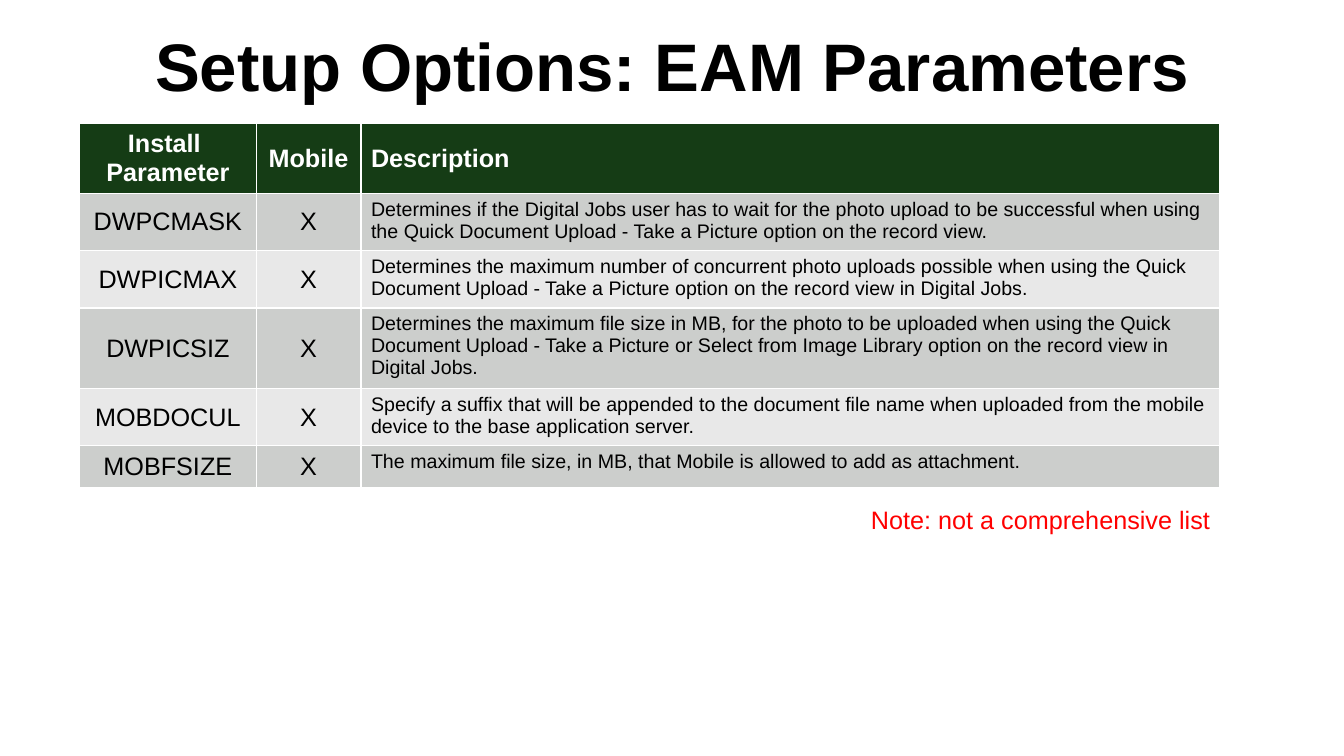
from pptx import Presentation
from pptx.dml.color import RGBColor
from pptx.enum.text import MSO_ANCHOR, PP_ALIGN
from pptx.util import Inches, Pt

LEFT, CENTER = PP_ALIGN.LEFT, PP_ALIGN.CENTER
TOP, MIDDLE, BOTTOM = MSO_ANCHOR.TOP, MSO_ANCHOR.MIDDLE, MSO_ANCHOR.BOTTOM

# Content
TITLE = "Setup Options: EAM Parameters"
NOTE = "Note: not a comprehensive list"
HEADINGS = ("Install \nParameter", "Mobile", "Description")
PARAMETERS = [
    ("DWPCMASK", "X",
     "Determines if the Digital Jobs user has to wait for the photo upload to be "
     "successful when using the Quick Document Upload - Take a Picture option on "
     "the record view."),
    ("DWPICMAX", "X",
     "Determines the maximum number of concurrent photo uploads possible when using "
     "the Quick Document Upload - Take a Picture option on the record view in "
     "Digital Jobs."),
    ("DWPICSIZ", "X",
     "Determines the maximum file size in MB, for the photo to be uploaded when using "
     "the Quick Document Upload - Take a Picture or Select from Image Library option "
     "on the record view in Digital Jobs."),
    ("MOBDOCUL", "X",
     "Specify a suffix that will be appended to the document file name when uploaded "
     "from the mobile device to the base application server."),
    ("MOBFSIZE", "X",
     "The maximum file size, in MB, that Mobile is allowed to add as attachment."),
]

# Formats
COLUMN_WIDTHS = (1.75, 1.04, 8.52)
ROW_HEIGHT = 0.41
ALIGNMENTS = (CENTER, CENTER, LEFT)
BODY_SIZES = (18, 18, 14)
BODY_ANCHORS = (MIDDLE, MIDDLE, TOP)
HEADER_FILL, BAND_FILLS = "153C15", ("CCCECC", "E8E8E8")


def color(hex_value):
    return RGBColor.from_string(hex_value)


def write(frame, text, size, hex_value, bold=False, align=LEFT, spacing=None):
    frame.text = text
    font_format = {"name": "Arial", "size": Pt(size), "bold": bold}
    for paragraph in frame.paragraphs:
        paragraph.alignment = align
        paragraph.line_spacing = spacing
        for run in paragraph.runs:
            for attribute, value in font_format.items():
                setattr(run.font, attribute, value)
            run.font.color.rgb = color(hex_value)


def add_text(slide, box, anchor, *args, **kwargs):
    frame = slide.shapes.add_textbox(*map(Inches, box)).text_frame
    frame.word_wrap = True
    frame.vertical_anchor = anchor
    write(frame, *args, **kwargs)


def add_parameters(slide):
    rows = [HEADINGS] + PARAMETERS
    table = slide.shapes.add_table(
        len(rows), len(HEADINGS), Inches(0.79), Inches(1.22),
        Inches(sum(COLUMN_WIDTHS)), Inches(ROW_HEIGHT * len(rows))).table
    for column, width in zip(table.columns, COLUMN_WIDTHS):
        column.width = Inches(width)
    for r, row in enumerate(rows):
        header = r == 0
        for c, text in enumerate(row):
            cell = table.cell(r, c)
            cell.fill.solid()
            cell.fill.fore_color.rgb = color(
                HEADER_FILL if header else BAND_FILLS[(r - 1) % 2])
            cell.vertical_anchor = MIDDLE if header else BODY_ANCHORS[c]
            write(cell.text_frame, text, 18 if header else BODY_SIZES[c],
                  "FFFFFF" if header else "000000", header, ALIGNMENTS[c])


def main():
    deck = Presentation()
    deck.slide_width, deck.slide_height = Inches(13.33), Inches(7.5)
    slide = deck.slides.add_slide(deck.slide_layouts[6])
    add_text(slide, (1.23, 0.17, 10.88, 0.93), BOTTOM, TITLE, 48, "000000",
             bold=True, align=CENTER, spacing=0.9)
    add_parameters(slide)
    add_text(slide, (8.54, 4.95, 3.72, 0.4), TOP, NOTE, 18, "FF0000")
    deck.save("out.pptx")


if __name__ == "__main__":
    main()
